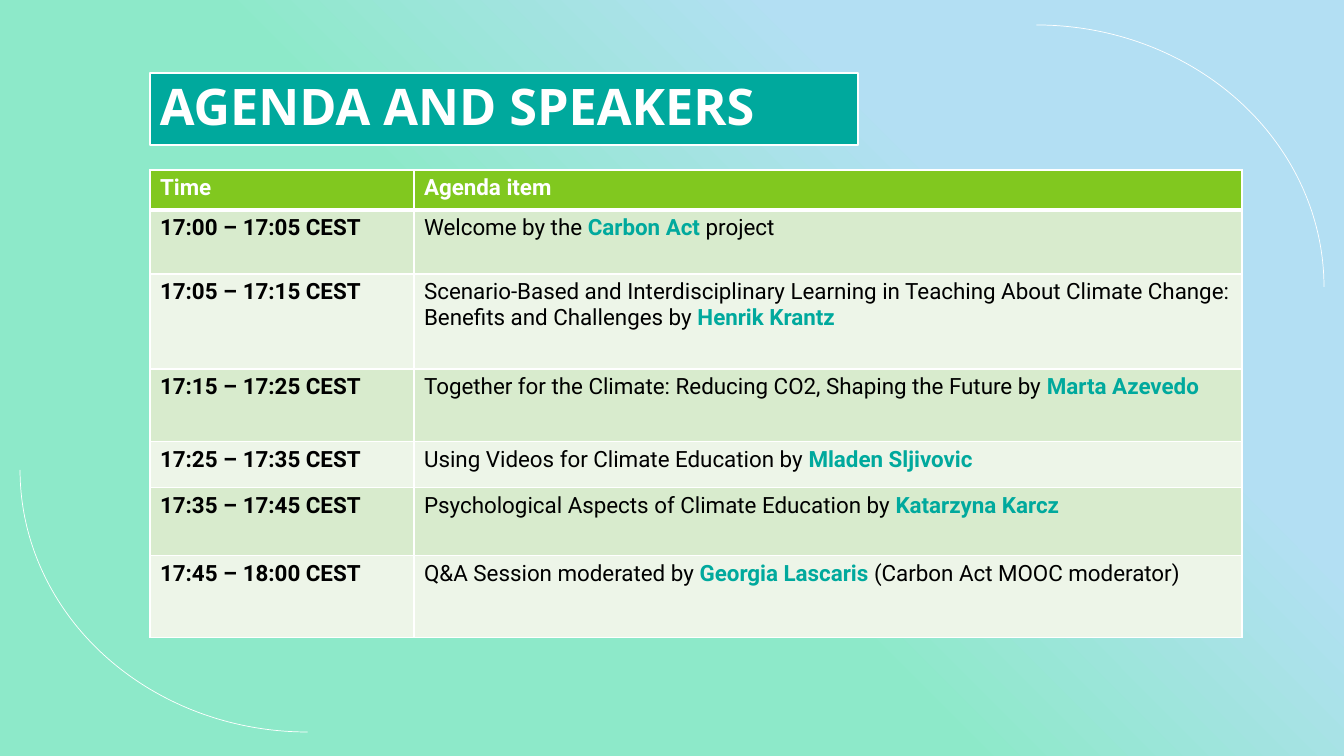
from lxml.etree import SubElement
from pptx import Presentation
from pptx.dml.color import RGBColor
from pptx.enum.shapes import MSO_SHAPE as Shape
from pptx.enum.text import MSO_ANCHOR as Anchor, MSO_AUTO_SIZE as AutoSize, PP_ALIGN as Align
from pptx.oxml.ns import qn
from pptx.util import Emu, Pt

COLORS = {
    "mint": "8DE9C9",
    "sky": "B3DFF3",
    "teal": "00A99D",
    "lime": "81C81F",
    "band_dark": "D8EBCD",
    "band_light": "EDF5E8",
    "white": "FFFFFF",
    "black": "000000",
}
EMU_PER_PX = 12192000 / 1344

AGENDA = [
    ("17:00 – 17:05 CEST", "Welcome by the ", "Carbon Act", " project", 64),
    ("17:05 – 17:15 CEST",
     "Scenario-Based and Interdisciplinary Learning in Teaching About Climate Change: "
     "Benefits and Challenges by ", "Henrik Krantz", "", 95),
    ("17:15 – 17:25 CEST",
     "Together for the Climate: Reducing CO2, Shaping the Future by ", "Marta Azevedo", "", 73),
    ("17:25 – 17:35 CEST", "Using Videos for Climate Education by ", "Mladen Sljivovic", "", 46),
    ("17:35 – 17:45 CEST", "Psychological Aspects of Climate Education by ",
     "Katarzyna Karcz", "", 68),
    ("17:45 – 18:00 CEST", "Q&A Session moderated by ", "Georgia Lascaris",
     " (Carbon Act MOOC moderator)", 82),
]


def px(value):
    return Emu(round(value * EMU_PER_PX))


def rgb(name):
    return RGBColor.from_string(COLORS[name])


class AgendaSlide:
    heading_font = "Open Sans"
    body_font = "Roboto"
    body_size = 16

    def __init__(self, presentation):
        self.slide = presentation.slides.add_slide(presentation.slide_layouts[6])

    def background(self, stops):
        fill = self.slide.background.fill
        fill.gradient()
        for stop, (name, position) in zip(fill.gradient_stops, stops):
            stop.color.rgb = rgb(name)
            stop.position = position
        gradient = self.slide.element.find(".//" + qn("a:gradFill"))
        gradient.remove(gradient.find(qn("a:lin")))
        circle = SubElement(gradient, qn("a:path"), path="circle")
        SubElement(circle, qn("a:fillToRect"), t="100000", r="100000")

    def shape(self, kind, left, top, width, height, line_width, fill=None):
        shape = self.slide.shapes.add_shape(kind, px(left), px(top), px(width), px(height))
        shape.shadow.inherit = False
        if fill:
            shape.fill.solid()
            shape.fill.fore_color.rgb = rgb(fill)
        else:
            shape.fill.background()
        shape.line.color.rgb = rgb("white")
        shape.line.width = Pt(line_width)
        return shape

    def arc(self, left, top, rotation=0):
        arc = self.shape(Shape.ARC, left, top, 575, 524, 0.5)
        arc.rotation = rotation

    def title(self, text, left, top, width, height):
        title = self.shape(Shape.RECTANGLE, left, top, width, height, 1.5, "teal")
        frame = title.text_frame
        frame.text = text
        frame.word_wrap = True
        frame.auto_size = AutoSize.SHAPE_TO_FIT_TEXT
        frame.vertical_anchor = Anchor.MIDDLE
        paragraph = frame.paragraphs[0]
        paragraph.alignment = Align.LEFT
        paragraph.line_spacing = 0.9
        self.style(paragraph.runs[0], self.heading_font, 36, "white", True)

    def style(self, run, font_name, size, color, bold):
        font = run.font
        font.name = font_name
        font.size = Pt(size)
        font.bold = bold
        font.color.rgb = rgb(color)

    def cell(self, cell, parts, fill, bottom_border=1):
        cell.fill.solid()
        cell.fill.fore_color.rgb = rgb(fill)
        paragraph = cell.text_frame.paragraphs[0]
        for text, color, bold in parts:
            if text:
                run = paragraph.add_run()
                run.text = text
                self.style(run, self.body_font, self.body_size, color, bold)
        properties = cell._tc.get_or_add_tcPr()
        borders = {"a:lnL": 1, "a:lnR": 1, "a:lnT": 1, "a:lnB": bottom_border}
        for index, (side, width) in enumerate(borders.items()):
            border = SubElement(properties, qn(side), w=str(Pt(width)))
            solid = SubElement(border, qn("a:solidFill"))
            SubElement(solid, qn("a:srgbClr"), val=COLORS["white"])
            properties.insert(index, border)

    def table(self, left, top, widths, header, header_height, agenda):
        heights = [header_height] + [item[-1] for item in agenda]
        table = self.slide.shapes.add_table(
            len(heights), len(widths), px(left), px(top), px(sum(widths)), px(sum(heights))
        ).table
        table.horz_banding = False
        for column, width in zip(table.columns, widths):
            column.width = px(width)
        for row, height in zip(table.rows, heights):
            row.height = px(height)
        for column, label in enumerate(header):
            self.cell(table.cell(0, column), [(label, "white", True)], "lime", 3)
        for row, (time, before, name, after, _) in enumerate(agenda, 1):
            fill = "band_dark" if row % 2 else "band_light"
            self.cell(table.cell(row, 0), [(time, "black", True)], fill)
            item = [(before, "black", False), (name, "teal", True), (after, "black", False)]
            self.cell(table.cell(row, 1), item, fill)
            if row > 1:
                continue
            top_border = table.cell(row, 0)._tc.tcPr, table.cell(row, 1)._tc.tcPr
            for properties in top_border:
                properties.find(qn("a:lnT")).set("w", str(Pt(3)))


def main():
    presentation = Presentation()
    presentation.slide_width = px(1344)
    presentation.slide_height = px(756)
    agenda_slide = AgendaSlide(presentation)
    agenda_slide.background([("mint", 0.46), ("sky", 0.73)])
    agenda_slide.arc(749, 25)
    agenda_slide.arc(20, 208, 180)
    agenda_slide.title("AGENDA AND SPEAKERS", 150, 73, 708, 72)
    agenda_slide.table(150, 170, [264, 828], ["Time", "Agenda item"], 40, AGENDA)
    presentation.save("out.pptx")


if __name__ == "__main__":
    main()
